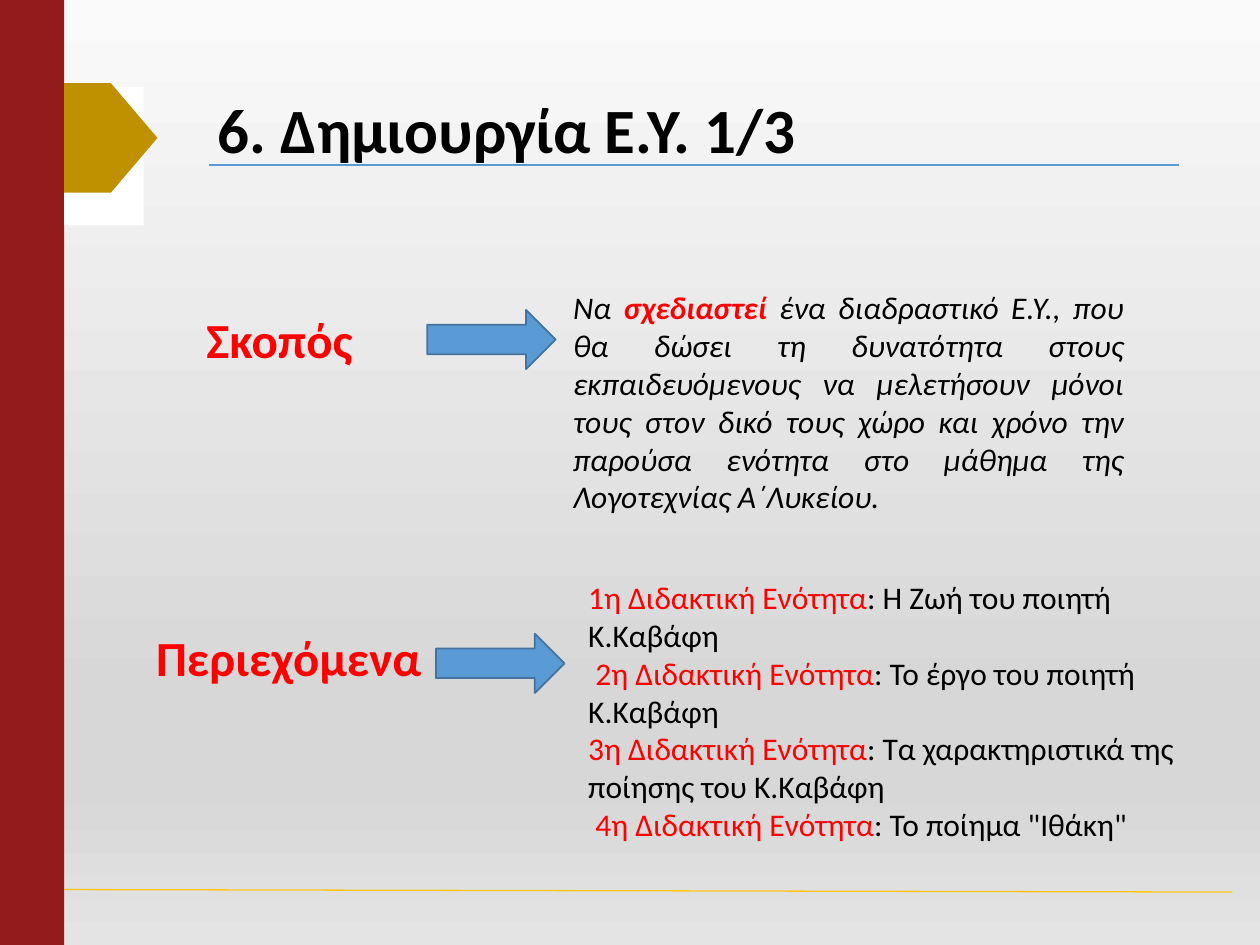
from lxml.etree import SubElement
from pptx import Presentation
from pptx.dml.color import RGBColor
from pptx.enum.shapes import MSO_CONNECTOR, MSO_SHAPE
from pptx.enum.text import MSO_ANCHOR, PP_ALIGN
from pptx.oxml.ns import qn
from pptx.util import Inches, Pt

COLORS = {
    "black": "000000", "red": "FF0000", "white": "FFFFFF",
    "maroon": "931B1B", "gold": "BF9000", "yellow": "FFC61A",
    "blue": "5B9BD5", "outline": "43739E",
}
BACKGROUND = [(0, "FAFAFA"), (74, "D7D7D7"), (83, "D7D7D7"), (100, "E4E4E4")]


class SlideBuilder:
    """Holds the style and the current slide."""

    font = "Calibri"

    def __init__(self, prs):
        self.s = prs.slides.add_slide(prs.slide_layouts[5])

    def color(self, name):
        return RGBColor.from_string(COLORS[name])

    def background(self, stops):
        fill = self.s.background.fill
        fill.gradient()
        fill.gradient_angle = 270
        gs_list = self.s.background._cSld.find(".//" + qn("a:gsLst"))
        for gs in list(gs_list):
            gs_list.remove(gs)
        for pos, value in stops:
            gs = SubElement(gs_list, qn("a:gs"), pos=str(pos * 1000))
            SubElement(gs, qn("a:srgbClr"), val=value)

    def shape(self, kind, x, y, w, h, fill, line=None):
        sp = self.s.shapes.add_shape(kind, Inches(x), Inches(y), Inches(w), Inches(h))
        sp.shadow.inherit = False
        sp.fill.solid()
        sp.fill.fore_color.rgb = self.color(fill)
        if line:
            sp.line.color.rgb = self.color(line)
            sp.line.width = Pt(1)
        else:
            sp.line.fill.background()

    def line(self, x1, y1, x2, y2, color):
        cx = self.s.shapes.add_connector(
            MSO_CONNECTOR.STRAIGHT, Inches(x1), Inches(y1), Inches(x2), Inches(y2))
        cx.line.color.rgb = self.color(color)
        cx.line.width = Pt(0.75)
        SubElement(cx._element.spPr, qn("a:effectLst"))

    def run(self, p, text, size, color="black", bold=False, italic=False):
        r = p.add_run()
        r.text = text
        r.font.name = self.font
        r.font.size = Pt(size)
        r.font.bold = bold
        r.font.italic = italic
        r.font.color.rgb = self.color(color)

    def title(self, text, x, y, w, h):
        sp = self.s.shapes.title
        sp.left, sp.top, sp.width, sp.height = map(Inches, (x, y, w, h))
        tf = sp.text_frame
        tf.vertical_anchor = MSO_ANCHOR.MIDDLE
        p = tf.paragraphs[0]
        p.alignment = PP_ALIGN.LEFT
        p.line_spacing = 0.9
        self.run(p, text, 36, bold=True)

    def text(self, x, y, w, h, paragraphs, size=18, align=PP_ALIGN.LEFT, **style):
        tf = self.s.shapes.add_textbox(
            Inches(x), Inches(y), Inches(w), Inches(h)).text_frame
        tf.word_wrap = True
        for i, runs in enumerate(paragraphs):
            p = tf.add_paragraph() if i else tf.paragraphs[0]
            p.alignment = align
            for text, extra in runs:
                self.run(p, text, size, **{**style, **extra})

    def label(self, text, x, y, w):
        self.text(x, y, w, 0.57, [[(text, {})]], size=28, color="red", bold=True)

    def arrow(self, x, y):
        self.shape(MSO_SHAPE.RIGHT_ARROW, x, y, 1.02, 0.47, "blue", "outline")


def main():
    prs = Presentation()
    prs.slide_width, prs.slide_height = Inches(10), Inches(7.5)
    b = SlideBuilder(prs)
    b.background(BACKGROUND)
    b.shape(MSO_SHAPE.RECTANGLE, 0, 0, 0.51, 7.5, "maroon")
    b.line(1.66, 1.31, 9.36, 1.31, "blue")
    b.line(0.51, 7.06, 9.78, 7.08, "yellow")
    b.shape(MSO_SHAPE.RECTANGLE, 0.51, 0.69, 0.63, 1.1, "white")
    b.shape(MSO_SHAPE.PENTAGON, 0.51, 0.66, 0.74, 0.87, "gold")
    b.title("6. Δημιουργία Ε.Υ. 1/3", 1.63, 0.64, 8.25, 0.84)

    b.label("Σκοπός", 1.54, 2.41, 1.57)
    b.arrow(3.39, 2.46)
    purpose = [
        ("Να ", {}),
        ("σχεδιαστεί", {"color": "red", "bold": True}),
        (" ένα διαδραστικό Ε.Υ., που θα δώσει τη δυνατότητα στους "
         "εκπαιδευόμενους να μελετήσουν μόνοι τους στον δικό τους χώρο και χρόνο "
         "την παρούσα ενότητα στο μάθημα της Λογοτεχνίας Α΄Λυκείου.", {}),
    ]
    b.text(4.45, 2.24, 4.57, 1.92, [purpose], align=PP_ALIGN.JUSTIFY, italic=True)

    b.label("Περιεχόμενα", 1.14, 4.93, 2.76)
    b.arrow(3.46, 5.03)
    units = [
        ("1η", "Η Ζωή του ποιητή Κ.Καβάφη"),
        (" 2η", "Το έργο του ποιητή Κ.Καβάφη"),
        ("3η", "Τα χαρακτηριστικά της ποίησης του Κ.Καβάφη"),
        (" 4η", 'Το ποίημα "Ιθάκη"'),
    ]
    contents = [[(f"{number} Διδακτική Ενότητα", {"color": "red"}), (f": {topic}", {})]
                for number, topic in units]
    b.text(4.57, 4.54, 5.31, 2.22, contents)
    prs.save("out.pptx")


if __name__ == "__main__":
    main()
